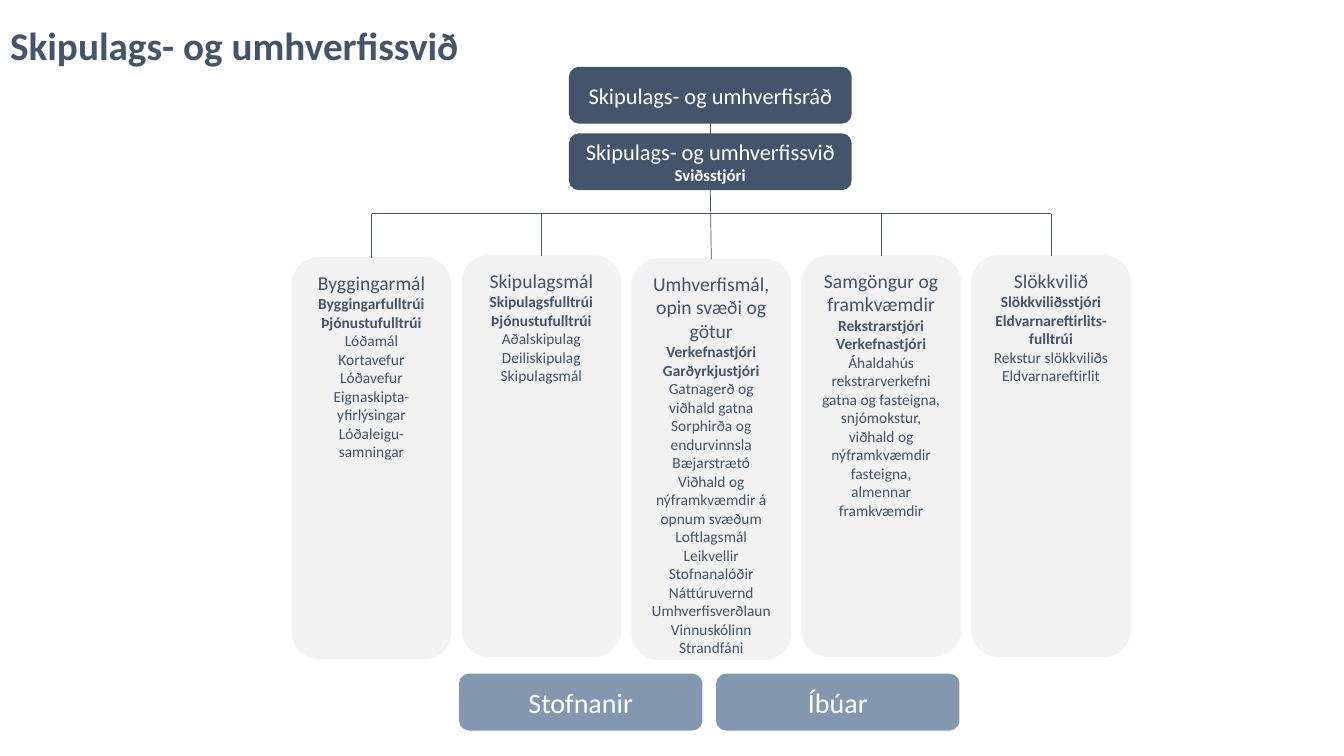
from lxml import etree
from pptx import Presentation
from pptx.dml.color import RGBColor
from pptx.enum.shapes import MSO_CONNECTOR, MSO_SHAPE
from pptx.enum.text import MSO_ANCHOR, PP_ALIGN
from pptx.oxml.ns import qn
from pptx.util import Inches, Pt

ROUND = MSO_SHAPE.ROUNDED_RECTANGLE
STRAIGHT = MSO_CONNECTOR.STRAIGHT
TOP, MIDDLE = MSO_ANCHOR.TOP, MSO_ANCHOR.MIDDLE
LEFT, CENTER = PP_ALIGN.LEFT, PP_ALIGN.CENTER
FONT = "Calibri"
COLORS = {"navy": "44546A", "steel": "8497B0", "pale": "F2F2F2", "white": "FFFFFF"}

TITLE = "Skipulags- og umhverfissvið"
COUNCIL = "Skipulags- og umhverfisráð"
HEAD = "Sviðsstjóri"
# Each unit: top edge, name, staff, tasks
UNITS = [
    (2.56, "Byggingarmál", ["Byggingarfulltrúi", "Þjónustufulltrúi"],
     ["Lóðamál", "Kortavefur", "Lóðavefur", "Eignaskipta- yfirlýsingar",
      "Lóðaleigu-samningar"]),
    (2.54, "Skipulagsmál", ["Skipulagsfulltrúi", "Þjónustufulltrúi"],
     ["Aðalskipulag", "Deiliskipulag", "Skipulagsmál"]),
    (2.57, "Umhverfismál, opin svæði og götur", ["Verkefnastjóri", "Garðyrkjustjóri"],
     ["Gatnagerð og viðhald gatna", "Sorphirða og endurvinnsla", "Bæjarstrætó",
      "Viðhald og nýframkvæmdir á opnum svæðum", "Loftlagsmál", "Leikvellir",
      "Stofnanalóðir", "Náttúruvernd", "Umhverfisverðlaun", "Vinnuskólinn",
      "Strandfáni"]),
    (2.54, "Samgöngur og framkvæmdir", ["Rekstrarstjóri", "Verkefnastjóri"],
     ["Áhaldahús rekstrarverkefni gatna og fasteigna, snjómokstur, viðhald og "
      "nýframkvæmdir fasteigna, almennar framkvæmdir"]),
    (2.54, "Slökkvilið", ["Slökkviliðsstjóri", "Eldvarnareftirlits-fulltrúi"],
     ["Rekstur slökkviliðs", "Eldvarnareftirlit"]),
]
CLIENTS = ["Stofnanir", "Íbúar"]

UNIT_X, UNIT_STEP, UNIT_W, UNIT_H = 2.9, 1.685, 1.57, 3.97
BOX_X, BOX_W, BOX_H = 5.65, 2.79, 0.55
CLIENT_X, CLIENT_STEP, CLIENT_W, CLIENT_Y = 4.56, 2.55, 2.4, 6.69
BAR_Y = 2.12


def color(name):
    return RGBColor.from_string(COLORS[name])


def write(frame, lines, ink, align=CENTER, anchor=MIDDLE):
    """Fill a text frame with (text, size, bold) lines."""
    frame.word_wrap = True
    frame.vertical_anchor = anchor
    for i, (text, size, bold) in enumerate(lines):
        para = frame.paragraphs[0] if i == 0 else frame.add_paragraph()
        para.alignment = align
        run = para.add_run()
        run.text = text
        run.font.name = FONT
        run.font.size = Pt(size)
        run.font.bold = bold
        run.font.color.rgb = color(ink)


def add_box(x, y, w, h, fill, lines, ink="white", anchor=MIDDLE):
    box = slide.shapes.add_shape(ROUND, Inches(x), Inches(y), Inches(w), Inches(h))
    box.shadow.inherit = False
    box.fill.solid()
    box.fill.fore_color.rgb = color(fill)
    box.line.color.rgb = color(fill)
    box.line.width = Pt(1)
    write(box.text_frame, lines, ink, anchor=anchor)
    return box


def add_line(x1, y1, x2, y2):
    line = slide.shapes.add_connector(
        STRAIGHT, Inches(x1), Inches(y1), Inches(x2), Inches(y2))
    line.line.color.rgb = color("navy")
    line.line.width = Pt(0.5)
    etree.SubElement(line.element.spPr, qn("a:effectLst"))
    return line


deck = Presentation()
deck.slide_width, deck.slide_height = Inches(13.33), Inches(7.5)
slide = deck.slides.add_slide(deck.slide_layouts[5])

title = slide.shapes.title
title.left, title.top = Inches(0), Inches(-0.04)
title.width, title.height = Inches(4.72), Inches(0.98)
write(title.text_frame, [(TITLE, 28, True)], "navy", LEFT)

council = add_box(BOX_X, 0.67, BOX_W, BOX_H, "navy", [(COUNCIL, 16, False)])
office = add_box(BOX_X, 1.33, BOX_W, BOX_H, "navy",
                 [(TITLE, 16, False), (HEAD, 12, True)])
mid = BOX_X + BOX_W / 2
link = add_line(mid, 1.22, mid, 1.33)
link.begin_connect(council, 2)
link.end_connect(office, 0)

centers = [UNIT_X + i * UNIT_STEP + UNIT_W / 2 for i in range(len(UNITS))]
add_line(centers[0], BAR_Y, centers[-1], BAR_Y)
for i, (center, (top, name, staff, tasks)) in enumerate(zip(centers, UNITS)):
    lines = [(name, 14, False)]
    lines += [(text, 11, True) for text in staff]
    lines += [(text, 11, False) for text in tasks]
    unit = add_box(center - UNIT_W / 2, top, UNIT_W, UNIT_H, "pale", lines, "navy", TOP)
    drop = add_line(center, BAR_Y, center, top)
    drop.end_connect(unit, 0)
    if i == len(UNITS) // 2:
        drop.begin_connect(office, 2)

for i, name in enumerate(CLIENTS):
    add_box(CLIENT_X + i * CLIENT_STEP, CLIENT_Y, CLIENT_W, BOX_H, "steel",
            [(name, 20, False)])

deck.save("out.pptx")
